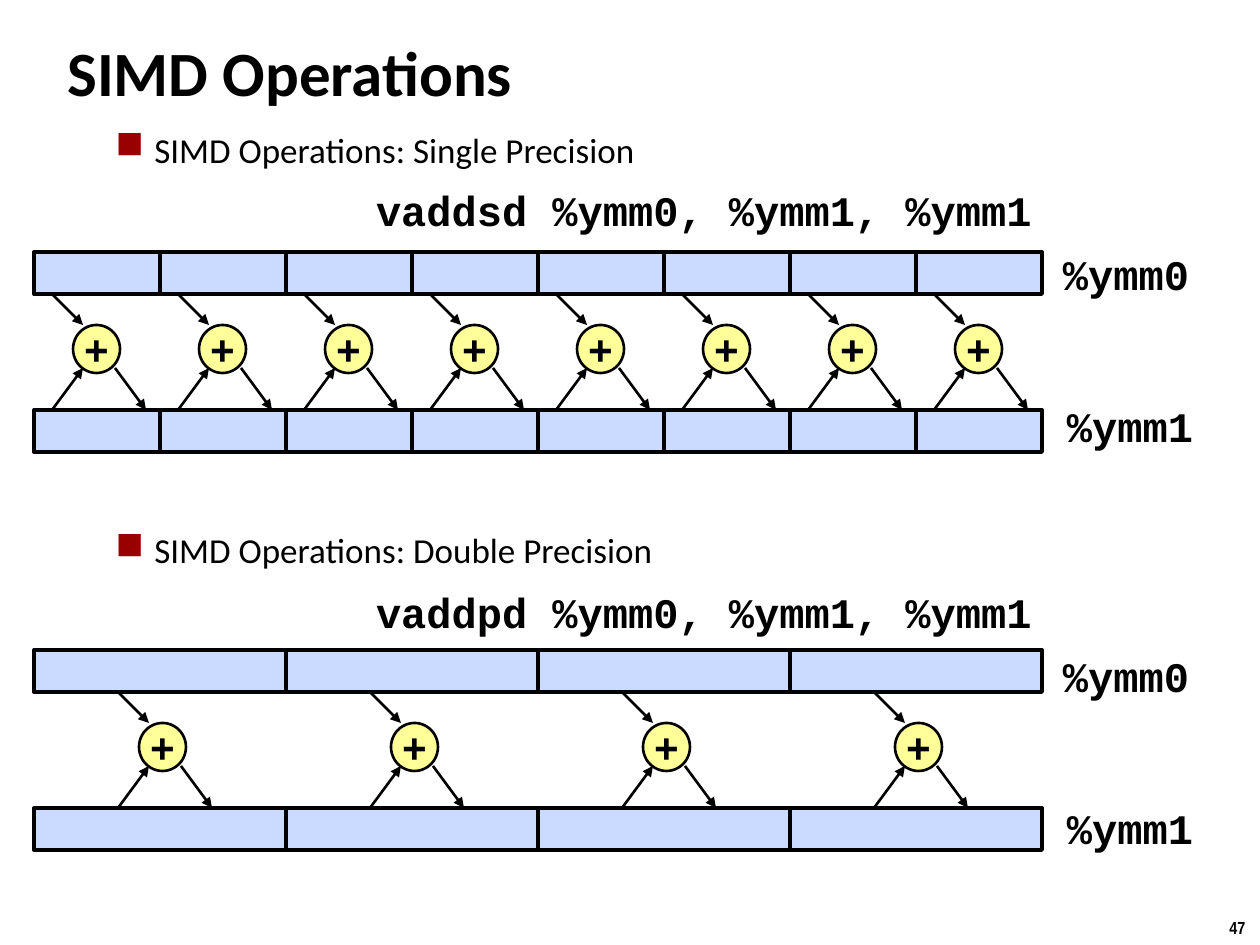
from dataclasses import dataclass

from lxml import etree
from pptx import Presentation
from pptx.dml.color import RGBColor
from pptx.enum.shapes import MSO_CONNECTOR, MSO_SHAPE
from pptx.enum.text import MSO_ANCHOR, MSO_AUTO_SIZE, PP_ALIGN
from pptx.oxml.ns import qn
from pptx.shapes.autoshape import Shape
from pptx.shapes.shapetree import GroupShapes
from pptx.util import Emu, Pt

RECT, OVAL = MSO_SHAPE.RECTANGLE, MSO_SHAPE.OVAL
STRAIGHT = MSO_CONNECTOR.STRAIGHT
MIDDLE, CENTER = MSO_ANCHOR.MIDDLE, PP_ALIGN.CENTER
GROW = MSO_AUTO_SIZE.SHAPE_TO_FIT_TEXT

COLORS = {
    "ink": "000000",
    "cell": "CBDBFF",
    "adder": "FFFF99",
    "bullet": "990000",
}
SANS, MONO, NARROW = "Calibri", "Courier New", "Arial Narrow"

LEFT, ROW_W, CELL_H = 34, 1008, 42
ROW_GAP = 158
ADDER_W, ADDER_H = 47, 48


@dataclass(frozen=True)
class Diagram:
    instruction: str
    lanes: int
    text_y: int
    row_y: int
    arrow_dx: int


@dataclass(frozen=True)
class Arrow:
    x1: int
    y1: int
    x2: int
    y2: int


DIAGRAMS = [
    Diagram("vaddpd %ymm0, %ymm1, %ymm1", 4, 581, 650, 84),
    Diagram("vaddsd %ymm0, %ymm1, %ymm1", 8, 179, 252, 18),
]
ARROWS = [
    Arrow(0, CELL_H, 31, 73),
    Arrow(0, ROW_GAP, 31, 116),
    Arrow(63, 116, 94, ROW_GAP),
]
TOPICS = ["SIMD Operations: Single Precision", "SIMD Operations: Double Precision"]


def px(n: int) -> Emu:
    return Emu(round(n * 914400 / 126))


def rgb(name: str) -> RGBColor:
    return RGBColor.from_string(COLORS[name])


def style_text(sp: Shape, size: int, font: str, bold: bool = True) -> None:
    for p in sp.text_frame.paragraphs:
        for r in p.runs:
            r.font.size = Pt(size)
            r.font.name = font
            r.font.bold = bold
            r.font.color.rgb = rgb("ink")


def set_insets(sp: Shape, inset: int) -> None:
    tf = sp.text_frame
    tf.margin_left = tf.margin_right = tf.margin_top = tf.margin_bottom = px(inset)


def add_box(shapes: GroupShapes, kind: MSO_SHAPE, x: int, y: int, w: int, h: int,
            fill: str, weight: float) -> Shape:
    sp = shapes.add_shape(kind, px(x), px(y), px(w), px(h))
    sp.shadow.inherit = False
    sp.fill.solid()
    sp.fill.fore_color.rgb = rgb(fill)
    sp.line.color.rgb = rgb("ink")
    sp.line.width = Pt(weight)
    return sp


def add_label(shapes: GroupShapes, text: str, x: int, y: int, w: int) -> None:
    sp = shapes.add_textbox(px(x), px(y), px(w), px(63))
    tf = sp.text_frame
    tf.text = text
    tf.word_wrap = False
    tf.auto_size = GROW
    set_insets(sp, 6)
    style_text(sp, 24, MONO)


def add_arrow(shapes: GroupShapes, a: Arrow, x: int, y: int) -> None:
    c = shapes.add_connector(STRAIGHT, px(x + a.x1), px(y + a.y1), px(x + a.x2), px(y + a.y2))
    c.line.color.rgb = rgb("ink")
    c.line.width = Pt(1.5)
    ln = c.line._get_or_add_ln()
    etree.SubElement(ln, qn("a:tailEnd"), type="triangle")
    etree.SubElement(c._element.spPr, qn("a:effectLst"))


def add_adder(shapes: GroupShapes, x: int, y: int) -> None:
    sp = add_box(shapes, OVAL, x + 21, y + 73, ADDER_W, ADDER_H, "adder", 1.5)
    tf = sp.text_frame
    tf.text = "+"
    tf.word_wrap = False
    tf.vertical_anchor = MIDDLE
    tf.paragraphs[0].alignment = CENTER
    set_insets(sp, 6)
    style_text(sp, 24, MONO)
    for a in ARROWS:
        add_arrow(shapes, a, x, y)


def add_diagram(shapes: GroupShapes, d: Diagram) -> None:
    lane_w = ROW_W // d.lanes
    lefts = [LEFT + i * lane_w for i in range(d.lanes)]
    for y in (d.row_y, d.row_y + ROW_GAP):
        for x in lefts:
            add_box(shapes, RECT, x, y, lane_w, CELL_H, "cell", 2.25)
    for x in lefts:
        add_adder(shapes, x + d.arrow_dx, d.row_y)
    add_label(shapes, d.instruction, 370, d.text_y, 674)
    add_label(shapes, "%ymm0", 1057, d.text_y + 64, 140)
    add_label(shapes, "%ymm1", 1061, d.text_y + 216, 140)


def add_topics(shapes: GroupShapes) -> None:
    sp = shapes.add_textbox(px(40), px(122), px(1145), px(739))
    tf = sp.text_frame
    tf.word_wrap = True
    tf.text = "\n".join(TOPICS)
    style_text(sp, 20, SANS, bold=False)
    tf.paragraphs[1].space_before = Pt(205)
    for p in tf.paragraphs:
        pPr = p._p.get_or_add_pPr()
        pPr.set("marL", str(px(102)))
        pPr.set("indent", str(px(-39)))
        color = etree.SubElement(pPr, qn("a:buClr"))
        etree.SubElement(color, qn("a:srgbClr"), val=COLORS["bullet"])
        etree.SubElement(pPr, qn("a:buSzPct"), val="110000")
        etree.SubElement(pPr, qn("a:buChar"), char="■")


def main() -> None:
    prs = Presentation()
    prs.slide_width, prs.slide_height = px(1260), px(945)
    s = prs.slides.add_slide(prs.slide_layouts[6])

    number = s.shapes.add_textbox(px(1217), px(911), px(43), px(34))
    number.text_frame.text = "47"
    number.text_frame.word_wrap = False
    number.text_frame.auto_size = GROW
    style_text(number, 10, NARROW)

    title = s.shapes.add_textbox(px(55), px(18), px(1201), px(107))
    title.text_frame.text = "SIMD Operations"
    title.text_frame.word_wrap = True
    title.text_frame.vertical_anchor = MIDDLE
    style_text(title, 36, SANS)

    add_topics(s.shapes)
    for d in DIAGRAMS:
        add_diagram(s.shapes.add_group_shape().shapes, d)
    prs.save("out.pptx")


if __name__ == "__main__":
    main()
